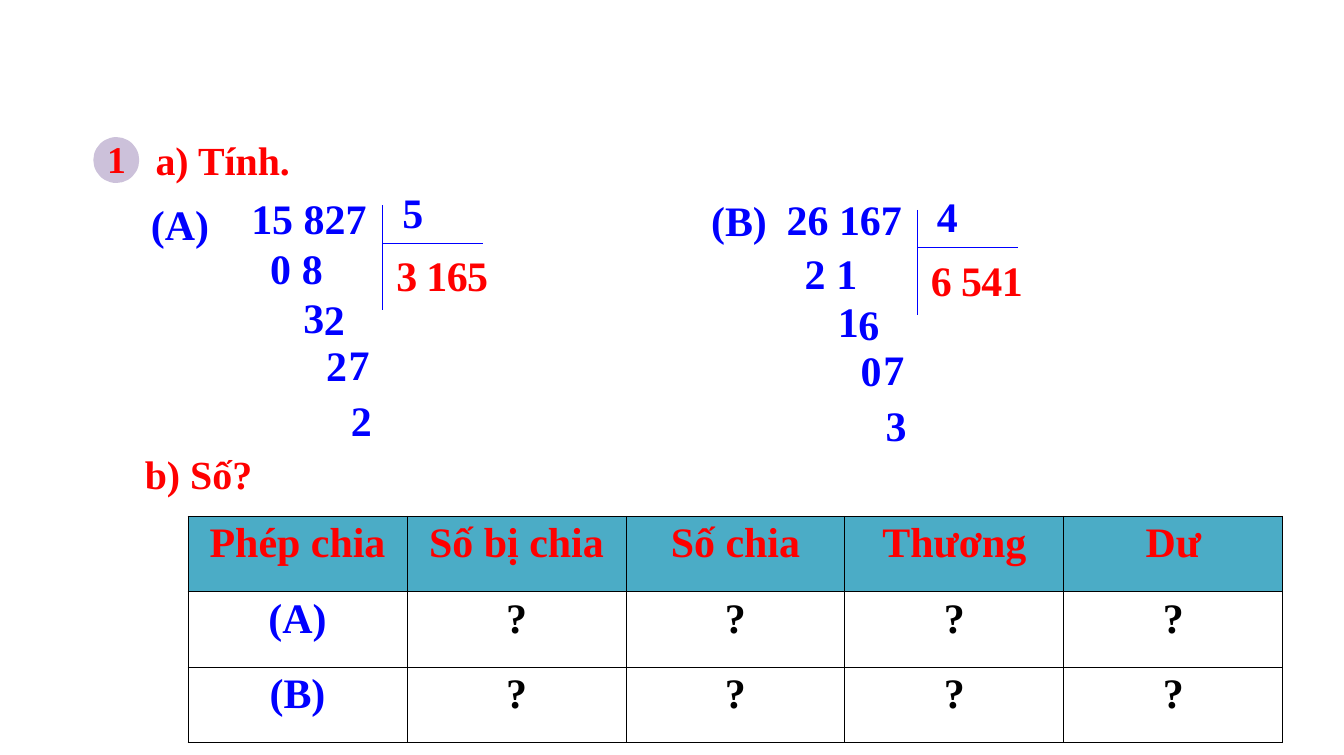
from lxml import etree
from pptx import Presentation
from pptx import util as u
from pptx.dml.color import RGBColor
from pptx.enum import shapes, text
from pptx.oxml import ns

PX = 9144
RED, BLUE, BLACK = "FF0000", "0000FF", "000000"
DIGITS = [
    (8, 54, 50, RED), (48, 54, 35, RED), (75, 54, 50, RED), (102, 54, 27, RED),
    (-159, 45, 33, BLUE), (-117, 45, 42, BLUE),
    (-115, 109, 58, BLUE), (-88, 112, 50, BLUE),
    (-85, 173, 58, BLUE), (-55, 172, 58, BLUE),
    (-52, 246, 58, BLUE),
]


def px(n):
    return u.Emu(n * PX)


def color(code):
    return RGBColor.from_string(code)


class Board:
    """Draws styled elements on one slide."""

    font = "Times New Roman"

    def __init__(self, slide):
        self.slide = slide

    def style(self, para, size, hue):
        para.font.name = self.font
        para.font.size = u.Pt(size)
        para.font.bold = True
        para.font.color.rgb = color(hue)

    def letter(self, box, words, size, hue, wrap):
        frame = box.text_frame
        frame.text = words
        frame.word_wrap = wrap
        frame.auto_size = text.MSO_AUTO_SIZE.SHAPE_TO_FIT_TEXT
        frame.vertical_anchor = text.MSO_ANCHOR.TOP
        para = frame.paragraphs[0]
        para.alignment = text.PP_ALIGN.LEFT
        self.style(para, size, hue)

    def title(self, x, y, w, h, words):
        box = self.slide.shapes.title
        box.left, box.top, box.width, box.height = map(px, (x, y, w, h))
        self.letter(box, words, 38, RED, False)

    def label(self, x, y, w, h, words, hue, size=40, wrap=True):
        box = self.slide.shapes.add_textbox(*map(px, (x, y, w, h)))
        self.letter(box, words, size, hue, wrap)

    def disc(self, x, y, size, hue):
        disc = self.slide.shapes.add_shape(
            shapes.MSO_SHAPE.OVAL, *map(px, (x, y, size, size)))
        disc.shadow.inherit = False
        disc.fill.solid()
        disc.fill.fore_color.rgb = color(hue)
        disc.line.color.rgb = color(hue)
        disc.line.width = u.Pt(2)

    def rule(self, x, y, w, h):
        line = self.slide.shapes.add_connector(
            shapes.MSO_CONNECTOR.STRAIGHT, *map(px, (x, y, x + w, y + h)))
        line.line.color.rgb = color(BLUE)
        line.line.width = u.Pt(0.75)
        etree.SubElement(line._element.spPr, ns.qn("a:effectLst"))

    def sum(self, x, y, by, digits):
        self.label(x + 16, y - 30, 92, 77, by, BLUE)
        self.rule(x, y, 0, 139)
        self.rule(x, y + 50, 133, 0)
        for digit, (dx, dy, w, hue) in zip(digits, DIGITS):
            self.label(x + dx, y + dy, w, 77, digit, hue)

    def edge(self, cell):
        props = cell._tc.get_or_add_tcPr()
        for spot, side in enumerate(("lnL", "lnR", "lnT", "lnB")):
            line = etree.Element(ns.qn("a:" + side), w="12700")
            fill = etree.SubElement(line, ns.qn("a:solidFill"))
            etree.SubElement(fill, ns.qn("a:srgbClr"), val=BLACK)
            props.insert(spot, line)

    def table(self, x, y, w, h, rows):
        grid = self.slide.shapes.add_table(
            len(rows), len(rows[0]), *map(px, (x, y, w, h))).table
        for r, row in enumerate(rows):
            for c, words in enumerate(row):
                cell = grid.cell(r, c)
                cell.text = words
                cell.fill.solid()
                cell.fill.fore_color.rgb = color("FFFFFF" if r else "4BACC6")
                para = cell.text_frame.paragraphs[0]
                para.alignment = text.PP_ALIGN.CENTER
                hue = RED if r == 0 else BLUE if c == 0 else BLACK
                self.style(para, 40, hue)
                self.edge(cell)


def main():
    deck = Presentation()
    deck.slide_width, deck.slide_height = px(1780), px(1000)
    board = Board(deck.slides.add_slide(deck.slide_layouts[5]))
    board.title(196, 175, 200, 74, "a) Tính.")
    board.disc(125, 183, 58, "CCC1DA")
    board.label(132, 175, 45, 71, "1", RED, 36, False)
    board.label(190, 258, 138, 77, "(A)", BLUE)
    board.label(323, 250, 183, 77, "15 827", BLUE)
    board.sum(507, 272, "5", "31650832272")
    board.label(932, 253, 107, 77, "(B)", BLUE)
    board.label(1032, 252, 183, 77, "26 167", BLUE)
    board.sum(1215, 278, "4", "65412116073")
    board.label(182, 591, 164, 74, "b) Số?", RED, 38, False)
    heads = ["Phép chia", "Số bị chia", "Số chia", "Thương", "Dư"]
    rows = [[name] + ["?"] * 4 for name in ("(A)", "(B)")]
    board.table(249, 684, 1450, 300, [heads] + rows)
    deck.save("out.pptx")


if __name__ == "__main__":
    main()
